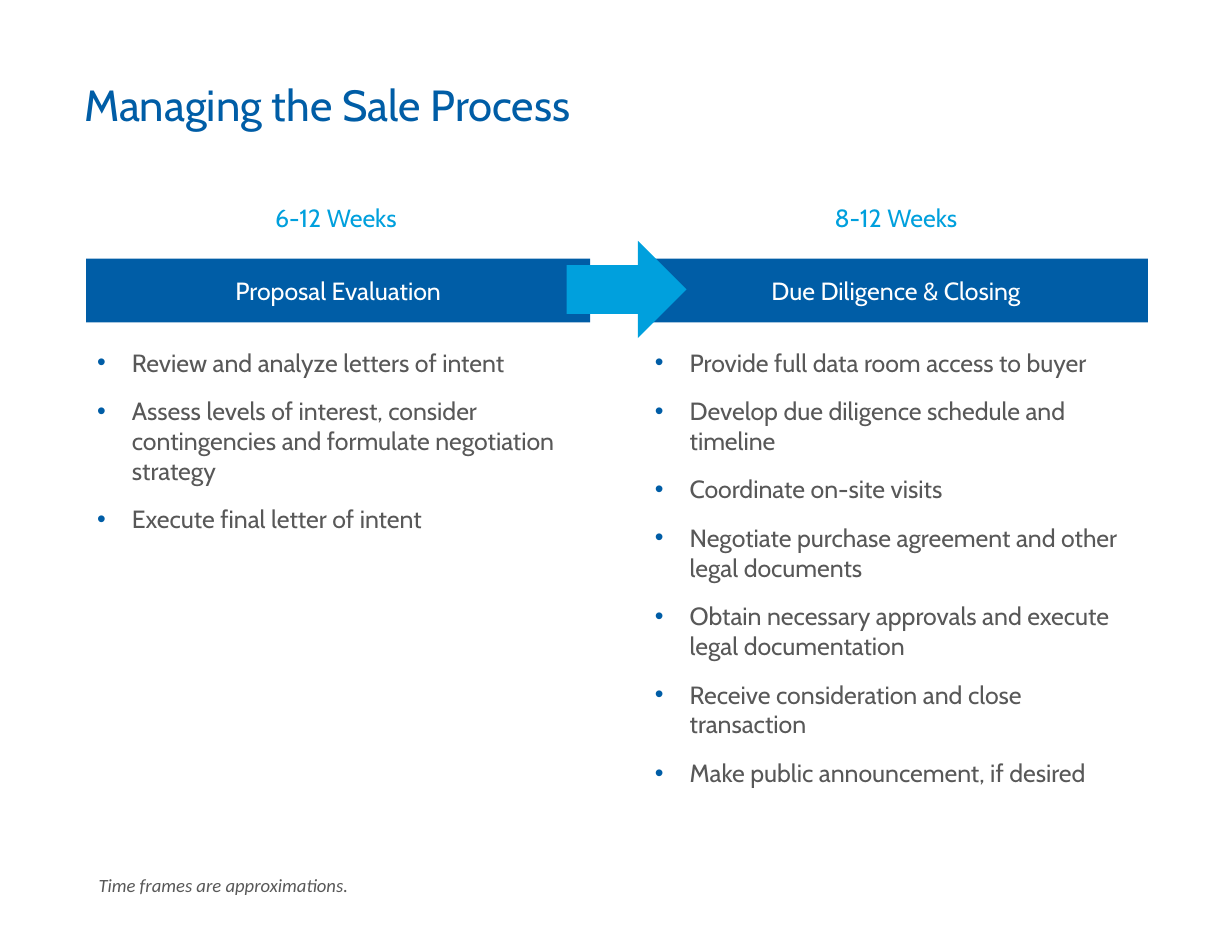
"""Build the Managing the Sale Process slide with two timed phases."""
from dataclasses import dataclass

from lxml.etree import SubElement
from pptx import Presentation
from pptx.dml.color import RGBColor
from pptx.enum.shapes import MSO_SHAPE
from pptx.enum.text import MSO_ANCHOR, PP_ALIGN
from pptx.oxml.ns import qn
from pptx.util import Emu, Pt


@dataclass(frozen=True)
class Theme:
    blue: str = "005DA6"
    sky: str = "00A0DD"
    gray: str = "585858"
    white: str = "FFFFFF"
    font: str = "Cabin"
    note_font: str = "Calibri"
    title_size: int = 28
    body_size: int = 16
    note_size: int = 12


theme = Theme()
PX = 9144


def place(*lengths):
    return [Emu(length * PX) for length in lengths]


def write(box, lines, color, size=theme.body_size, font=theme.font,
          align=PP_ALIGN.LEFT, anchor=MSO_ANCHOR.MIDDLE, inset=0):
    frame = box.text_frame
    frame.word_wrap = True
    frame.vertical_anchor = anchor
    frame.margin_left = frame.margin_right = Emu(inset * PX)
    frame.margin_top = frame.margin_bottom = 0
    frame.text = "\n".join(lines)
    for para in frame.paragraphs:
        para.alignment = align
        para.font.name = font
        para.font.size = Pt(size)
        para.font.color.rgb = RGBColor.from_string(color)
    return frame.paragraphs


deck = Presentation()
deck.slide_width, deck.slide_height = place(1100, 850)
page = deck.slides.add_slide(deck.slide_layouts[5])
shapes = page.shapes

title = shapes.title
title.left, title.top, title.width, title.height = place(75, 75, 950, 42)
heading = write(title, ["Managing the Sale Process"], theme.blue, theme.title_size)[0]
heading.line_spacing = 0.9

phases = [
    (75, 77, "6-12 Weeks", "Proposal Evaluation", 277, [
        "Review and analyze letters of intent",
        "Assess levels of interest, consider contingencies and formulate negotiation strategy",
        "Execute final letter of intent",
    ]),
    (575, 575, "8-12 Weeks", "Due Diligence & Closing", 344, [
        "Provide full data room access to buyer",
        "Develop due diligence schedule and timeline",
        "Coordinate on-site visits",
        "Negotiate purchase agreement and other legal documents",
        "Obtain necessary approvals and execute legal documentation",
        "Receive consideration and close transaction",
        "Make public announcement, if desired",
    ]),
]

for weeks_left, left, weeks, phase, list_height, tasks in phases:
    weeks_box = shapes.add_textbox(*place(weeks_left, 180, 450, 28))
    write(weeks_box, [weeks], theme.sky, align=PP_ALIGN.CENTER)

    bar = shapes.add_shape(MSO_SHAPE.RECTANGLE, *place(left, 231, 450, 57))
    bar.shadow.inherit = False
    bar.fill.solid()
    bar.fill.fore_color.rgb = RGBColor.from_string(theme.blue)
    bar.line.fill.background()
    write(bar, [phase], theme.white, align=PP_ALIGN.CENTER, inset=10)

    task_box = shapes.add_textbox(*place(left, 310, 450, list_height))
    for para in write(task_box, tasks, theme.gray, anchor=MSO_ANCHOR.TOP, inset=10):
        para.space_after = Pt(12)
        properties = para._p.get_or_add_pPr()
        properties.set("marL", str(31 * PX))
        properties.set("indent", str(-31 * PX))
        bullet_color = SubElement(properties, qn("a:buClr"))
        SubElement(bullet_color, qn("a:srgbClr"), val=theme.blue)
        SubElement(properties, qn("a:buFont"), typeface="Arial")
        SubElement(properties, qn("a:buChar"), char="•")
        properties.append(properties.find(qn("a:defRPr")))

arrow = shapes.add_shape(MSO_SHAPE.RIGHT_ARROW, *place(506, 215, 107, 87))
arrow.shadow.inherit = False
arrow.fill.solid()
arrow.fill.fore_color.rgb = RGBColor.from_string(theme.sky)
arrow.line.fill.background()

note_box = shapes.add_textbox(*place(88, 780, 637, 20))
note = write(note_box, ["Time frames are approximations."], theme.gray,
             theme.note_size, theme.note_font, anchor=MSO_ANCHOR.TOP)[0]
note.font.italic = True

deck.save("out.pptx")
